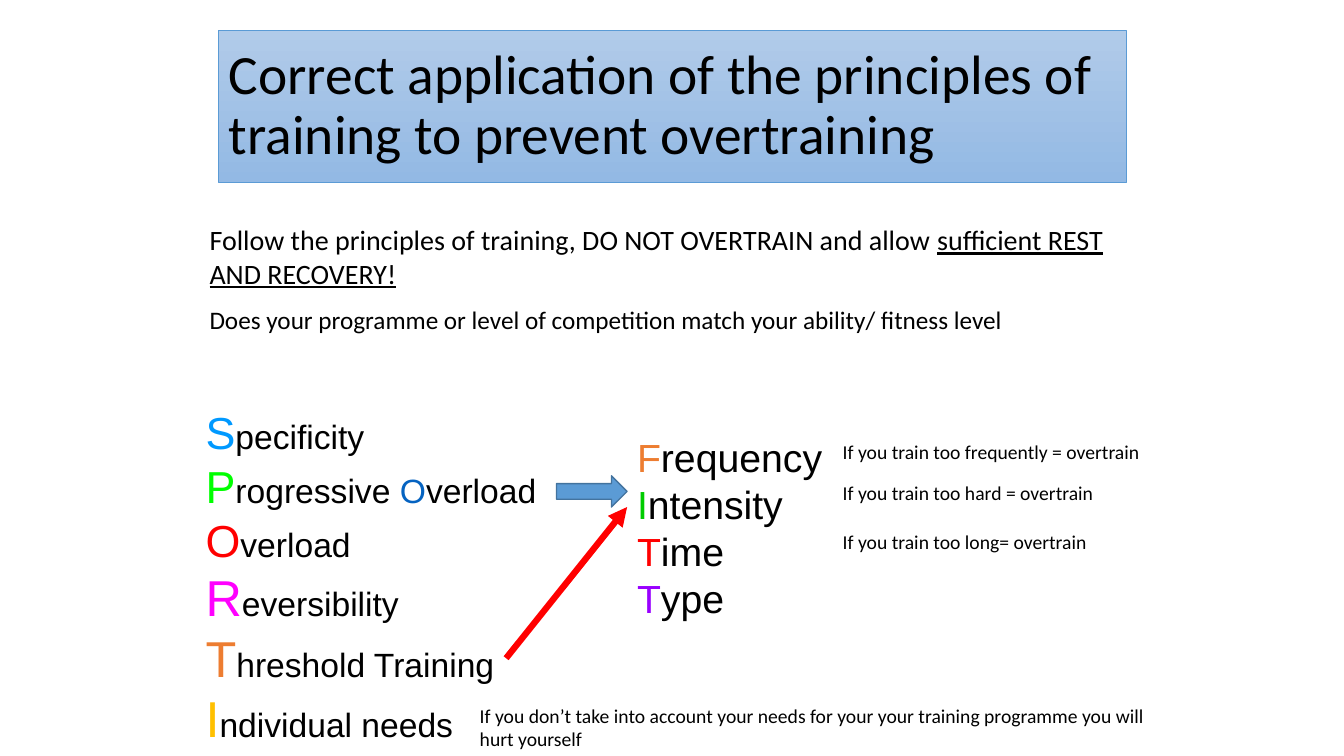
from lxml import etree
from pptx import Presentation
from pptx.dml.color import RGBColor
from pptx.enum import shapes, text
from pptx.oxml import ns
from pptx.util import Inches, Pt

BLACK = RGBColor(0x00, 0x00, 0x00)
RED = RGBColor(0xFF, 0x00, 0x00)
ORANGE = RGBColor(0xED, 0x7D, 0x31)
SKY = RGBColor(0x00, 0x99, 0xFF)
LIME = RGBColor(0x00, 0xFF, 0x00)
GREEN = RGBColor(0x00, 0xCC, 0x00)
LINK_BLUE = RGBColor(0x05, 0x63, 0xC1)
MAGENTA = RGBColor(0xFF, 0x00, 0xFF)
GOLD = RGBColor(0xFF, 0xC0, 0x00)
PURPLE = RGBColor(0x99, 0x00, 0xFF)
BLUE = RGBColor(0x5B, 0x9B, 0xD5)
DARK_BLUE = RGBColor(0x43, 0x73, 0x9E)
TITLE_TOP = RGBColor(0xB1, 0xCB, 0xE9)
TITLE_BOTTOM = RGBColor(0x93, 0xB9, 0xE4)

TITLE = "Correct application of the principles of training to prevent overtraining"
ADVICE = [("Follow the principles of training, DO NOT OVERTRAIN and allow ", 20, BLACK),
          ("sufficient REST AND RECOVERY!", 20, BLACK)]
QUESTION = "Does your programme or level of competition match your ability/ fitness level"
SPORTI = [
    [("S", 32, SKY), ("pecificity", 24, BLACK)],
    [("P", 32, LIME), ("rogressive ", 24, BLACK), ("O", 24, LINK_BLUE), ("verload", 24, BLACK)],
    [("O", 32, RED), ("verload", 24, BLACK)],
    [("R", 36, MAGENTA), ("eversibility", 24, BLACK)],
    [("T", 36, ORANGE), ("hreshold Training", 24, BLACK)],
    [("I", 36, GOLD), ("ndividual needs", 24, BLACK)],
]
FITT = [("F", "requency", ORANGE), ("I", "ntensity", GREEN), ("T", "ime", RED), ("T", "ype", PURPLE)]
NOTES = [
    ("If you train too frequently = overtrain", 8.26, 4.32, 3.41, 0.34),
    ("If you train too hard = overtrain", 8.26, 4.72, 3.41, 0.34),
    ("If you train too long= overtrain", 8.26, 5.21, 3.41, 0.34),
    ("If you don’t take into account your needs for your your training programme "
     "you will hurt yourself", 4.66, 6.93, 7, 0.57),
]


def add_text(s, lines, box, font="Calibri"):
    """Add a wrapped text box whose lines are lists of (text, size, colour) runs."""
    tf = s.shapes.add_textbox(*map(Inches, box)).text_frame
    tf.word_wrap = True
    for i, line in enumerate(lines):
        p = tf.paragraphs[0] if i == 0 else tf.add_paragraph()
        for words, size, colour in line:
            r = p.add_run()
            r.text = words
            r.font.name, r.font.size = font, Pt(size)
            r.font.color.rgb = colour
    return tf


def add_title(s):
    """Fill and format the title placeholder."""
    sp = s.shapes.title
    sp.left, sp.top, sp.width, sp.height = map(Inches, (2.17, 0.3, 9, 1.51))
    sp.fill.gradient()
    sp.fill.gradient_angle = 270
    for stop, colour, position in zip(sp.fill.gradient_stops, (TITLE_TOP, TITLE_BOTTOM), (0, 1)):
        stop.color.rgb = colour
        stop.position = position
    sp.line.color.rgb = BLUE
    sp.line.width = Pt(0.5)
    tf = sp.text_frame
    tf.text = TITLE
    tf.word_wrap = True
    tf.auto_size = text.MSO_AUTO_SIZE.NONE
    tf.vertical_anchor = text.MSO_ANCHOR.MIDDLE
    p = tf.paragraphs[0]
    p.alignment = text.PP_ALIGN.LEFT
    p.line_spacing = 0.9
    font = p.runs[0].font
    font.name, font.size = "Calibri", Pt(39.6)
    font.color.rgb = BLACK


def add_arrows(s):
    """Point from progressive overload and threshold training to FITT."""
    sp = s.shapes.add_shape(shapes.MSO_SHAPE.RIGHT_ARROW, *map(Inches, (5.52, 4.72, 0.7, 0.31)))
    sp.shadow.inherit = False
    sp.fill.solid()
    sp.fill.fore_color.rgb = BLUE
    sp.line.color.rgb = DARK_BLUE
    sp.line.width = Pt(1)
    line = s.shapes.add_connector(shapes.MSO_CONNECTOR.STRAIGHT, *map(Inches, (5.02, 6.53, 6.22, 5.03)))
    line.line.color.rgb = RED
    line.line.width = Pt(4.5)
    ln = line._element.spPr.find(ns.qn("a:ln"))
    etree.SubElement(ln, ns.qn("a:tailEnd"), type="triangle")
    etree.SubElement(line._element.spPr, ns.qn("a:effectLst"))


def main():
    """Build the overtraining slide."""
    prs = Presentation()
    prs.slide_width, prs.slide_height = Inches(13.33), Inches(7.5)
    s = prs.slides.add_slide(prs.slide_layouts[5])
    add_title(s)
    add_text(s, SPORTI, (1.94, 3.97, 5.55, 3.53), "Arial")
    fitt = [[(initial, 28, colour), (rest, 28, BLACK)] for initial, rest, colour in FITT]
    add_text(s, fitt, (6.22, 4.25, 2.04, 2.46), "Arial")
    add_arrows(s)
    advice = add_text(s, [ADVICE], (1.98, 2.16, 9.44, 0.77))
    advice.paragraphs[0].runs[1].font.underline = True
    add_text(s, [[(QUESTION, 18, BLACK)]], (1.98, 2.97, 8.17, 0.4))
    for words, *box in NOTES:
        add_text(s, [[(words, 14, BLACK)]], box)
    prs.save("out.pptx")


if __name__ == "__main__":
    main()
